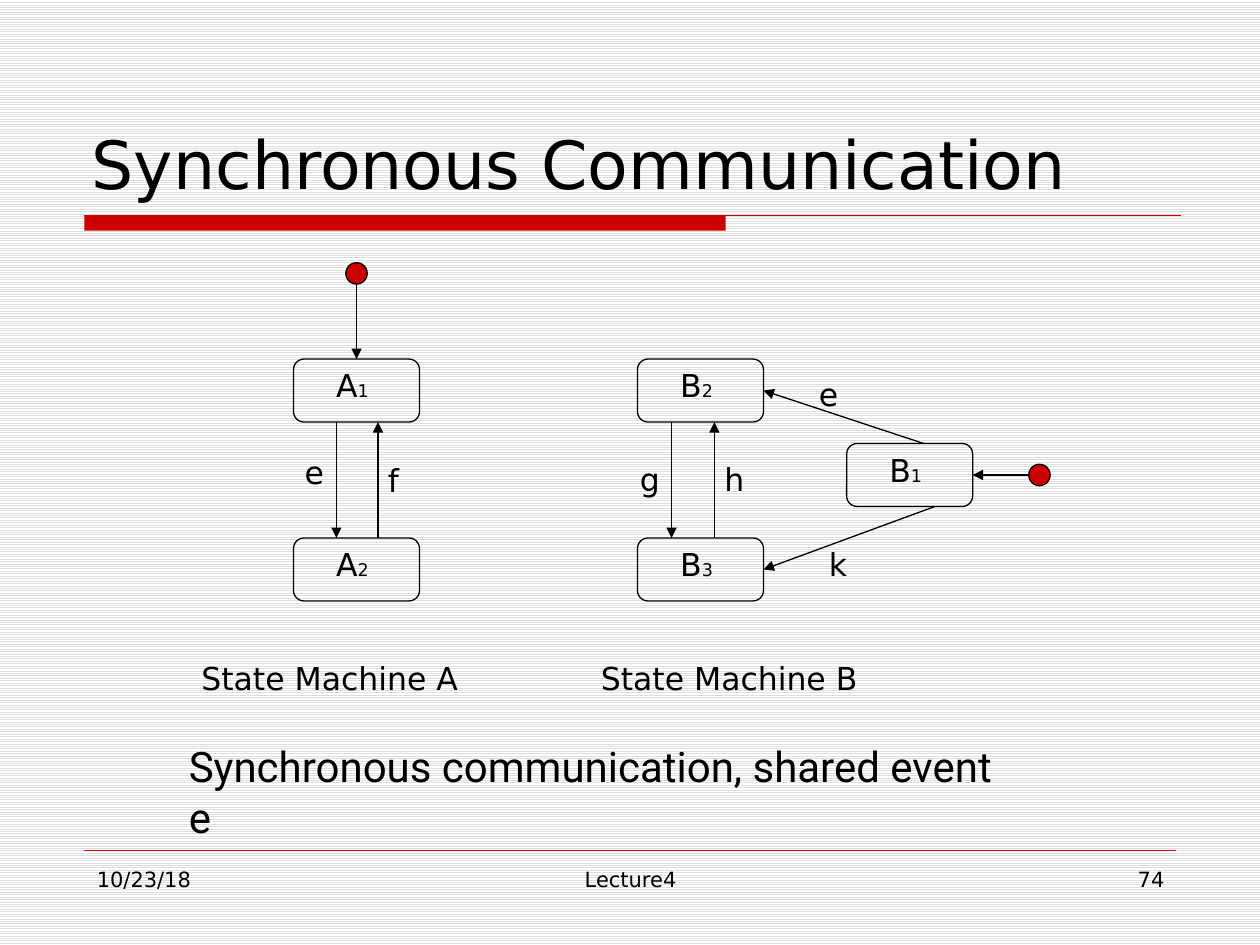
"""Build the slide on synchronous communication between two state machines."""
from lxml import etree
from pptx import Presentation
from pptx import util as u
from pptx.dml.color import RGBColor
from pptx.enum import dml, shapes, text
from pptx.oxml.ns import qn

FONT = "DejaVu Sans"
COLORS = {"ink": "000000", "accent": "CC0000", "stripe": "DDDDDD", "paper": "FFFFFF"}
LEFT, CENTER, RIGHT = text.PP_ALIGN.LEFT, text.PP_ALIGN.CENTER, text.PP_ALIGN.RIGHT

STATE_WIDTH, STATE_HEIGHT, DOT = 1, 0.5, 0.17
STATES = {
    "A1": (2.33, 2.85), "A2": (2.33, 4.27),
    "B2": (5.06, 2.85), "B3": (5.06, 4.27), "B1": (6.72, 3.52),
}
VERTICAL_EVENTS = [
    ("A1", "A2", 2.67), ("A2", "A1", 3),
    ("B2", "B3", 5.33), ("B3", "B2", 5.67),
]
SLANTED_EVENTS = [((7.33, 3.52), "B2"), ((7.42, 4.02), "B3")]
INITIAL_DOTS = [((2.83, 2.17), (2.83, 2.25), "A1", 0), ((8.25, 3.77), (8.17, 3.77), "B1", 3)]
EVENT_LABELS = [
    ("e", 2.32, 3.55, 0.35), ("f", 2.98, 3.61, 0.29), ("g", 4.98, 3.6, 0.36),
    ("h", 5.65, 3.6, 0.36), ("k", 6.48, 4.28, 0.35), ("e", 6.4, 2.93, 0.35),
]
CAPTIONS = [("State Machine A", 1.5), ("State Machine B", 4.67)]
FOOTERS = [
    ("10/23/18", 0.67, 2.17, LEFT), ("Lecture4", 3.42, 3.17, CENTER), ("74", 7.17, 2.17, RIGHT),
]


def color(name):
    return RGBColor.from_string(COLORS[name])


def add_text(page, content, left, top, width, height, size=18, font=FONT,
             align=LEFT, wrap=True, anchor=text.MSO_ANCHOR.TOP):
    box = page.shapes.add_textbox(*map(u.Inches, (left, top, width, height)))
    frame = box.text_frame
    frame.word_wrap = wrap
    frame.vertical_anchor = anchor
    para = frame.paragraphs[0]
    para.text = content
    para.alignment = align
    style_span(para.runs[0], size, font)
    return para


def style_span(span, size, font=FONT):
    span.font.size = u.Pt(size)
    span.font.name = font
    span.font.color.rgb = color("ink")


def add_shape(page, kind, left, top, width, height, fill=None, line="ink"):
    shape = page.shapes.add_shape(kind, *map(u.Inches, (left, top, width, height)))
    shape.shadow.inherit = False
    if fill:
        shape.fill.solid()
        shape.fill.fore_color.rgb = color(fill)
    else:
        shape.fill.background()
    if line:
        shape.line.color.rgb = color(line)
        shape.line.width = u.Pt(0.75)
    else:
        shape.line.fill.background()
    return shape


def add_line(page, start, end, name="ink", width=0.75, arrow=True):
    line = page.shapes.add_connector(shapes.MSO_CONNECTOR.STRAIGHT, *map(u.Inches, start + end))
    line.line.color.rgb = color(name)
    line.line.width = u.Pt(width)
    if arrow:
        etree.SubElement(line.line._get_or_add_ln(), qn("a:tailEnd"), type="triangle")
    etree.SubElement(line._element.spPr, qn("a:effectLst"))
    return line


def add_state(page, name):
    left, top = STATES[name]
    state = add_shape(page, shapes.MSO_SHAPE.ROUNDED_RECTANGLE, left, top, STATE_WIDTH, STATE_HEIGHT)
    letter, number = name
    para = add_text(page, letter, left + 0.24, top + 0.01, 0.46, 0.4, wrap=False)
    span = para.add_run()
    span.text = number
    style_span(span, 10)
    return state


def add_diagram(page):
    states = {name: add_state(page, name) for name in STATES}
    for source, target, x in VERTICAL_EVENTS:
        top, bottom = sorted((STATES[source][1], STATES[target][1]))
        ends = [(x, top + STATE_HEIGHT), (x, bottom)]
        if STATES[source][1] == bottom:
            ends.reverse()
        add_line(page, *ends)
    for start, target in SLANTED_EVENTS:
        add_line(page, start, start).end_connect(states[target], 3)
    for (x, y), start, target, side in INITIAL_DOTS:
        add_shape(page, shapes.MSO_SHAPE.OVAL, x - DOT / 2, y - DOT / 2, DOT, DOT, "accent")
        add_line(page, start, start).end_connect(states[target], side)
    for label, left, top, width in EVENT_LABELS:
        add_text(page, label, left, top, width, 0.4, wrap=False)
    for caption, left in CAPTIONS:
        add_text(page, caption, left, 5.18, 2.58, 0.4)


def main():
    deck = Presentation()
    deck.slide_width, deck.slide_height = u.Inches(10), u.Inches(7.5)
    page = deck.slides.add_slide(deck.slide_layouts[6])
    fill = page.background.fill
    fill.patterned()
    fill.pattern = dml.MSO_PATTERN.LIGHT_HORIZONTAL
    fill.fore_color.rgb, fill.back_color.rgb = color("stripe"), color("paper")

    add_shape(page, shapes.MSO_SHAPE.RECTANGLE, 0.67, 1.71, 5.09, 0.12, "accent", None)
    add_line(page, (0.67, 1.71), (9.37, 1.71), "accent", arrow=False)
    add_line(page, (0.67, 6.75), (9.33, 6.75), "accent", 0.25, arrow=False)
    for content, left, width, align in FOOTERS:
        add_text(page, content, left, 6.83, width, 0.52, 12, align=align)
    add_text(page, "Synchronous Communication", 0.63, 0.33, 8.75, 1.33, 38,
             anchor=text.MSO_ANCHOR.BOTTOM)
    add_diagram(page)
    add_text(page, "Synchronous communication, shared event e", 1.4, 5.83, 6.7, 0.5, 24, "Roboto")
    deck.save("out.pptx")


if __name__ == "__main__":
    main()
